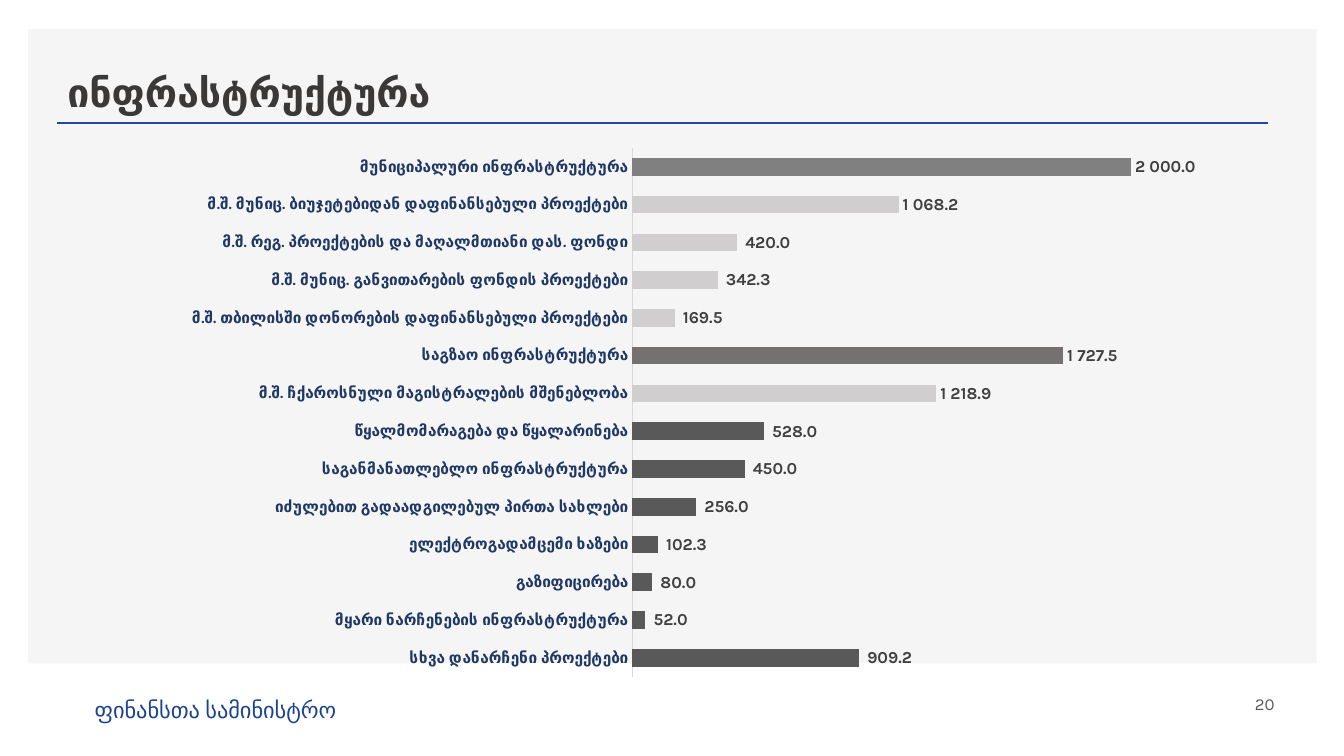
"""Build the infrastructure spending slide with its horizontal bar chart."""
from typing import NamedTuple

from pptx import Presentation
from pptx.chart.chart import Chart
from pptx.chart.data import CategoryChartData
from pptx.dml.color import RGBColor
from pptx.enum.chart import XL_CHART_TYPE as ChartType
from pptx.enum.chart import XL_LABEL_POSITION as LabelPosition
from pptx.enum.chart import XL_TICK_LABEL_POSITION as TickLabels
from pptx.enum.chart import XL_TICK_MARK as TickMark
from pptx.enum.shapes import MSO_CONNECTOR as Connector
from pptx.enum.shapes import MSO_SHAPE as Shape
from pptx.enum.text import MSO_ANCHOR as Anchor
from pptx.enum.text import PP_ALIGN as Align
from pptx.oxml import parse_xml
from pptx.oxml.ns import nsdecls, qn
from pptx.slide import Slide
from pptx.util import Inches, Pt

PANEL = RGBColor(0xF5, 0xF5, 0xF5)
RULE = RGBColor(0x22, 0x49, 0x94)
FOOTER = RGBColor(0x1D, 0x43, 0x8B)
TITLE = RGBColor(0x3B, 0x38, 0x38)
NUMBER = RGBColor(0x59, 0x59, 0x59)
CATEGORY = RGBColor(0x20, 0x38, 0x64)
VALUE = RGBColor(0x40, 0x40, 0x40)
AXIS = RGBColor(0xD9, 0xD9, 0xD9)
MUNICIPAL = RGBColor(0x80, 0x80, 0x80)
ROADS = RGBColor(0x76, 0x71, 0x71)
SUBITEM = RGBColor(0xD0, 0xCE, 0xCE)
OTHER = RGBColor(0x59, 0x59, 0x59)

FONT = "Karla"
VALUE_FORMAT = r"#\ ##0.0"


class Caption(NamedTuple):
    """A single-line text with its place and style."""
    text: str
    left: float
    top: float
    width: float
    height: float
    size: int
    color: RGBColor
    bold: bool = False
    align: Align = Align.LEFT
    anchor: Anchor = Anchor.TOP
    wrap: bool = True


class Bar(NamedTuple):
    """One bar of the chart."""
    label: str
    value: float
    color: RGBColor = OTHER


CAPTIONS = [
    Caption("ფინანსთა სამინისტრო", 0.84, 6.86, 2.81, 0.37, 16, FOOTER, wrap=False),
    Caption("ინფრასტრუქტურა", 0.57, 0.49, 12.17, 0.7, 28, TITLE, bold=True, anchor=Anchor.BOTTOM),
    Caption("20", 9.16, 6.78, 3.58, 0.4, 12, NUMBER, align=Align.RIGHT, anchor=Anchor.MIDDLE),
]

BARS = [
    Bar("მუნიციპალური ინფრასტრუქტურა", 2000, MUNICIPAL),
    Bar("მ.შ. მუნიც. ბიუჯეტებიდან დაფინანსებული პროექტები", 1068.2, SUBITEM),
    Bar("მ.შ. რეგ. პროექტების და მაღალმთიანი დას. ფონდი", 420, SUBITEM),
    Bar("მ.შ. მუნიც. განვითარების ფონდის პროექტები", 342.3, SUBITEM),
    Bar("მ.შ. თბილისში დონორების დაფინანსებული პროექტები", 169.5, SUBITEM),
    Bar("საგზაო ინფრასტრუქტურა", 1727.5, ROADS),
    Bar("მ.შ. ჩქაროსნული მაგისტრალების მშენებლობა", 1218.9, SUBITEM),
    Bar("წყალმომარაგება და წყალარინება", 528),
    Bar("საგანმანათლებლო ინფრასტრუქტურა", 450),
    Bar("იძულებით გადაადგილებულ პირთა სახლები", 256),
    Bar("ელექტროგადამცემი ხაზები", 102.3),
    Bar("გაზიფიცირება", 80),
    Bar("მყარი ნარჩენების ინფრასტრუქტურა", 52),
    Bar("სხვა დანარჩენი პროექტები", 909.2),
]


def style_font(font, size: int, color: RGBColor, bold: bool) -> None:
    """Apply the slide's typeface with a size, colour and weight."""
    font.name = FONT
    font.size = Pt(size)
    font.bold = bold
    font.color.rgb = color


def add_backdrop(page: Slide) -> None:
    """Draw the grey panel and the rule under the title."""
    panel = page.shapes.add_shape(
        Shape.RECTANGLE, Inches(0.28), Inches(0.29), Inches(12.78), Inches(6.29))
    panel.shadow.inherit = False
    panel.fill.solid()
    panel.fill.fore_color.rgb = PANEL
    panel.line.fill.background()
    rule = page.shapes.add_connector(
        Connector.STRAIGHT, Inches(0.57), Inches(1.22), Inches(12.58), Inches(1.22))
    rule.line.color.rgb = RULE
    rule.line.width = Pt(2)
    rule.element.spPr.append(parse_xml(f"<a:effectLst {nsdecls('a')}/>"))


def add_caption(page: Slide, caption: Caption) -> None:
    """Add one caption as a text box."""
    box = page.shapes.add_textbox(
        Inches(caption.left), Inches(caption.top), Inches(caption.width), Inches(caption.height))
    frame = box.text_frame
    frame.word_wrap = caption.wrap
    frame.vertical_anchor = caption.anchor
    para = frame.paragraphs[0]
    para.text = caption.text
    para.alignment = caption.align
    style_font(para.font, caption.size, caption.color, caption.bold)


def place_plot(chart: Chart, x: float, y: float, w: float, h: float) -> None:
    """Fix the inner plot area as fractions of the chart."""
    plot_area = chart.element.find(f".//{qn('c:plotArea')}")
    for old in plot_area.findall(qn("c:layout")):
        plot_area.remove(old)
    sizes = "".join(f'<c:{name} val="{size}"/>' for name, size in zip("xywh", (x, y, w, h)))
    plot_area.insert(0, parse_xml(
        f'<c:layout {nsdecls("c")}><c:manualLayout><c:layoutTarget val="inner"/>'
        f'<c:xMode val="edge"/><c:yMode val="edge"/>{sizes}</c:manualLayout></c:layout>'))


def add_spending_chart(page: Slide, bars: list[Bar]) -> None:
    """Add the bar chart, with the first bar at the top."""
    rising = bars[::-1]
    data = CategoryChartData(number_format=VALUE_FORMAT)
    data.categories = [bar.label for bar in rising]
    data.add_series("Series 1", [bar.value for bar in rising])
    chart = page.shapes.add_chart(
        ChartType.BAR_CLUSTERED, Inches(0), Inches(1.38), Inches(12.62), Inches(5.5), data).chart
    chart.has_title = False
    chart.has_legend = False
    style_font(chart.font, 10, VALUE, True)
    place_plot(chart, 0.497, 0.016, 0.49, 0.954)

    categories = chart.category_axis
    categories.major_tick_mark = categories.minor_tick_mark = TickMark.NONE
    categories.tick_label_position = TickLabels.NEXT_TO_AXIS
    categories.format.line.color.rgb = AXIS
    categories.format.line.width = Pt(1)
    style_font(categories.tick_labels.font, 11, CATEGORY, True)

    values = chart.value_axis
    values.minimum_scale = 0
    values.maximum_scale = 2500
    values.has_major_gridlines = False
    values.visible = False

    plot = chart.plots[0]
    plot.gap_width = 115
    plot.overlap = -20
    plot.vary_by_categories = False
    plot.has_data_labels = True
    labels = plot.data_labels
    labels.show_value = True
    labels.position = LabelPosition.OUTSIDE_END
    labels.number_format = VALUE_FORMAT
    labels.number_format_is_linked = False
    style_font(labels.font, 12, VALUE, True)
    for index, bar in enumerate(rising):
        fill = plot.series[0].points[index].format.fill
        fill.solid()
        fill.fore_color.rgb = bar.color


def main() -> None:
    """Build and save the deck."""
    deck = Presentation()
    deck.slide_width = Inches(13.33)
    deck.slide_height = Inches(7.5)
    page = deck.slides.add_slide(deck.slide_layouts[6])
    add_backdrop(page)
    for caption in CAPTIONS:
        add_caption(page, caption)
    add_spending_chart(page, BARS)
    deck.save("out.pptx")


if __name__ == "__main__":
    main()
